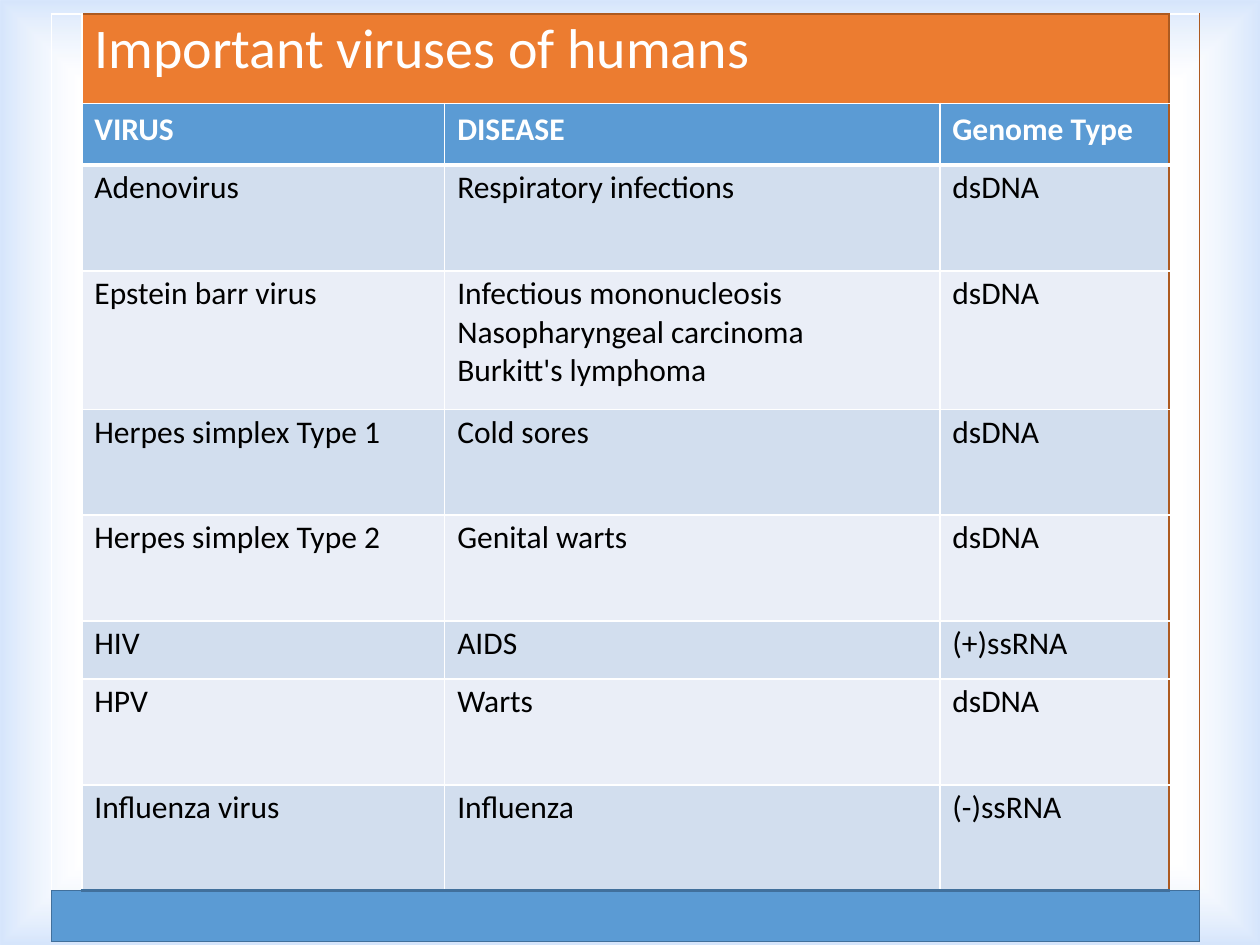
import pptx
import pptx.util
import pptx.dml.color
import pptx.enum.shapes
import pptx.oxml
import pptx.oxml.ns
from dataclasses import dataclass
from pptx.util import Inches


@dataclass(frozen=True)
class Theme:
    font: str = "Calibri"
    title_size: int = 32
    text_size: int = 18
    white: str = "FFFFFF"
    black: str = "000000"
    orange: str = "EC7C30"
    dark_orange: str = "AD5A20"
    blue: str = "5B9BD4"
    dark_blue: str = "41709C"
    glow: str = "4A8EF2"
    bands: tuple = ("D2DEEE", "EAEEF7")


theme = Theme()
rgb = pptx.dml.color.RGBColor.from_string
namespace = pptx.oxml.ns.nsdecls("a")


def set_borders(cell, **sides):
    """Draw all four sides in thin white unless a side (L, R, T, B) is given as (colour, points)."""
    properties = cell._tc.get_or_add_tcPr()
    for side in "LRTB":
        colour, points = sides.get(side, (theme.white, 1))
        properties.append(pptx.oxml.parse_xml(
            f'<a:ln{side} {namespace} w="{int(points * 12700)}"><a:solidFill>'
            f'<a:srgbClr val="{colour}"/></a:solidFill></a:ln{side}>'))


def write_cell(cell, text, fill, top, size=theme.text_size, colour=theme.black, bold=False):
    cell.fill.solid()
    cell.fill.fore_color.rgb = rgb(fill)
    cell.margin_left, cell.margin_top = Inches(0.1), Inches(top)
    cell.margin_right = cell.margin_bottom = 0
    for number, line in enumerate(text.split("\n")):
        frame = cell.text_frame
        paragraph = frame.add_paragraph() if number else frame.paragraphs[0]
        run = paragraph.add_run()
        run.text = line
        run.font.name = theme.font
        run.font.size = pptx.util.Pt(size)
        run.font.bold = bold
        run.font.color.rgb = rgb(colour)


presentation = pptx.Presentation()
presentation.slide_width, presentation.slide_height = Inches(10), Inches(7.5)
slide = presentation.slides.add_slide(presentation.slide_layouts[6])

# Soft blue glow around the edges of the slide
glow = slide.shapes.add_shape(
    pptx.enum.shapes.MSO_SHAPE.RECTANGLE, 0, 0, Inches(10), Inches(7.5))
glow.shadow.inherit = False
glow.line.fill.background()
glow_properties = glow._element.spPr
glow_properties.find(pptx.oxml.ns.qn("a:prstGeom")).addnext(pptx.oxml.parse_xml(
    f'<a:gradFill {namespace} rotWithShape="1"><a:gsLst>'
    f'<a:gs pos="83000"><a:srgbClr val="{theme.white}"><a:alpha val="11000"/></a:srgbClr></a:gs>'
    f'<a:gs pos="100000"><a:srgbClr val="{theme.glow}"><a:alpha val="23000"/></a:srgbClr></a:gs>'
    '</a:gsLst><a:path path="rect">'
    '<a:fillToRect l="50000" t="50000" r="50000" b="50000"/></a:path></a:gradFill>'))

# Table with a narrow frame column on each side and a footer row
headings = ["VIRUS", "DISEASE", "Genome Type"]
viruses = [
    ("Adenovirus", "Respiratory infections", "dsDNA"),
    ("Epstein barr virus",
     "Infectious mononucleosis\nNasopharyngeal carcinoma\nBurkitt's lymphoma", "dsDNA"),
    ("Herpes simplex Type 1", "Cold sores", "dsDNA"),
    ("Herpes simplex Type 2", "Genital warts", "dsDNA"),
    ("HIV", "AIDS", "(+)ssRNA"),
    ("HPV", "Warts", "dsDNA"),
    ("Influenza virus", "Influenza", "(-)ssRNA"),
]
column_widths = [0.13, 2.88, 3.93, 1.82, 0.13]
row_heights = [0.71, 0.49, 0.84, 1.1, 0.84, 0.84, 0.46, 0.84, 0.84, 0.4]
footer_row = len(row_heights) - 1
last_row = footer_row - 1

table = slide.shapes.add_table(
    len(row_heights), len(column_widths), Inches(0.41), Inches(0.11),
    Inches(sum(column_widths)), Inches(sum(row_heights))).table
table.first_row = table.horz_banding = False
for column, width in zip(table.columns, column_widths):
    column.width = Inches(width)
for row, height in zip(table.rows, row_heights):
    row.height = Inches(height)

orange_line = (theme.dark_orange, 1)
blue_line = (theme.dark_blue, 1)
for row in range(footer_row):
    bottom = {"B": (theme.dark_blue, 1.5)} if row == last_row else {}
    set_borders(table.cell(row, 0), R=(theme.white, 1.5), **bottom)
    set_borders(table.cell(row, 4), L=orange_line, R=orange_line, **bottom)
    for column in (1, 2, 3):
        sides = dict(bottom)
        if row == 0:
            sides["T"] = orange_line
        if row == 1:
            sides["B"] = (theme.white, 3)
        if row == 2:
            sides["T"] = (theme.white, 3)
        if column == 3:
            sides["R"] = orange_line
        set_borders(table.cell(row, column), **sides)
for column in range(len(column_widths)):
    set_borders(table.cell(footer_row, column), L=blue_line, R=blue_line, T=blue_line, B=blue_line)

for column in (0, 4):
    table.cell(0, column).merge(table.cell(last_row, column))
    table.cell(0, column).fill.background()
table.cell(0, 1).merge(table.cell(0, 3))
table.cell(footer_row, 0).merge(table.cell(footer_row, 4))
footer = table.cell(footer_row, 0)
footer.fill.solid()
footer.fill.fore_color.rgb = rgb(theme.blue)

write_cell(table.cell(0, 1), "Important viruses of humans", theme.orange, 0.01,
           theme.title_size, theme.white)
for column, heading in enumerate(headings, 1):
    write_cell(table.cell(1, column), heading, theme.blue, 0.06, colour=theme.white, bold=True)
for number, virus in enumerate(viruses):
    for column, text in enumerate(virus, 1):
        write_cell(table.cell(number + 2, column), text, theme.bands[number % 2], 0.03)

presentation.save("out.pptx")
